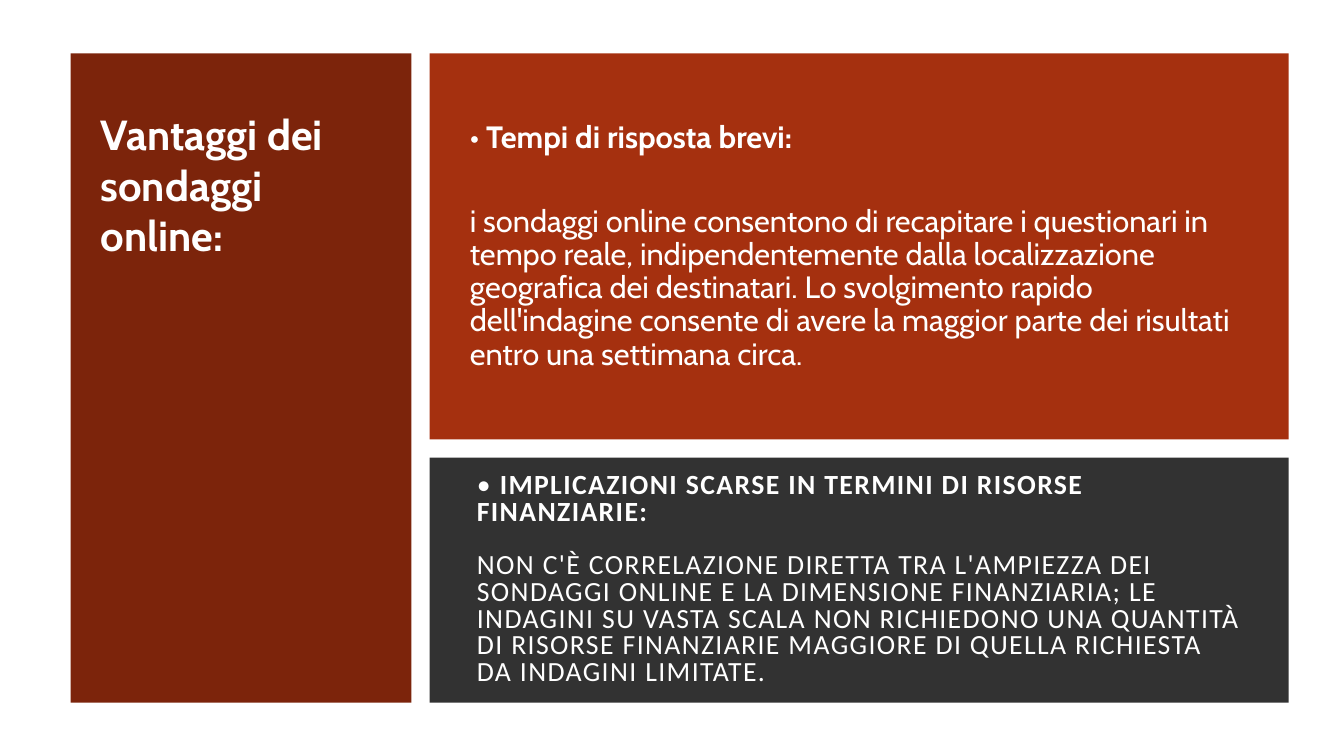
from copy import deepcopy

from pptx import Presentation
from pptx.dml.color import RGBColor
from pptx.enum.shapes import MSO_SHAPE
from pptx.enum.text import MSO_ANCHOR, MSO_AUTO_SIZE, PP_ALIGN
from pptx.util import Inches, Pt

WHITE = RGBColor(0xFF, 0xFF, 0xFF)
MAROON = RGBColor(0x7C, 0x24, 0x0B)
RUST = RGBColor(0xA5, 0x30, 0x0F)
CHARCOAL = RGBColor(0x32, 0x32, 0x32)

# Grid: two columns, the right one split into two rows
LEFT, TOP, GAP = 0.7, 0.53, 0.18
SIDE_W, MAIN_W = 3.38, 8.52
UPPER_H, LOWER_H = 3.83, 2.43
MAIN_X = LEFT + SIDE_W + GAP
LOWER_Y = TOP + UPPER_H + GAP


def inset(box, dx, dy, dw, dh):
    """Box moved in by dx, dy and made smaller by dw, dh."""
    x, y, w, h = box
    return x + dx, y + dy, w - dw, h - dh


def add_panel(slide, box, color):
    sp = slide.shapes.add_shape(MSO_SHAPE.RECTANGLE, *map(Inches, box))
    sp.fill.solid()
    sp.fill.fore_color.rgb = color
    sp.line.fill.background()
    sp.shadow.inherit = False


def add_text(slide, box):
    tf = slide.shapes.add_textbox(*map(Inches, box)).text_frame
    tf.word_wrap = True
    return tf


def style(p, font, size, bold=False):
    p.font.name, p.font.size, p.font.bold = font, Pt(size), bold
    p.font.color.rgb = WHITE


def add_run(p, text, bold=False):
    r = p.add_run()
    r.text = text
    r.font.bold = bold
    return r


def side_heading(slide, box):
    add_panel(slide, box, MAROON)
    p = add_text(slide, inset(box, 0.2, 0.5, 0.56, 4.82)).paragraphs[0]
    add_run(p, "Vantaggi dei sondaggi online:", True)
    p.space_after = Pt(6)
    style(p, "Cabin", 30, True)


def response_times(slide, box):
    add_panel(slide, box, RUST)
    tf = add_text(slide, inset(box, 0.35, 0.35, 0.69, 0.69))
    tf.vertical_anchor = MSO_ANCHOR.MIDDLE
    tf.margin_left = tf.margin_right = Inches(0.05)
    tf.margin_top = tf.margin_bottom = Inches(0.05)
    head, body = tf.paragraphs[0], tf.add_paragraph()
    add_run(head, "• ")
    add_run(head, "Tempi di risposta brevi:", True)
    add_run(body, "i sondaggi online consentono di recapitare i questionari "
            "in tempo reale, indipendentemente dalla localizzazione geografica "
            "dei destinatari. Lo svolgimento rapido dell'indagine consente di "
            "avere la maggior parte dei risultati entro una settimana circa.")
    body.space_before = Pt(30)
    for p in (head, body):
        p.line_spacing = 0.9
        p.space_after = Pt(6)
        style(p, "Cabin", 22)


def cost_title(slide, box):
    add_panel(slide, box, CHARCOAL)
    title = slide.shapes.title
    slide.shapes._spTree.append(title._element)  # in front of its panel
    x, y, w, h = inset(box, 0.37, 0.35, 0.72, 0.7)
    title.left, title.top = Inches(x), Inches(y)
    title.width, title.height = Inches(w), Inches(h)
    tf = title.text_frame
    tf.word_wrap = True
    tf.auto_size = MSO_AUTO_SIZE.NONE
    tf.vertical_anchor = MSO_ANCHOR.MIDDLE
    p = tf.paragraphs[0]
    p.alignment = PP_ALIGN.LEFT
    p.line_spacing = 0.8
    style(p, "Calibri", 19.8)
    add_run(p, "• ")
    add_run(p, "IMPLICAZIONI SCARSE IN TERMINI DI RISORSE FINANZIARIE:", True)
    p.add_line_break()
    p.add_line_break()
    add_run(p, "NON C'È CORRELAZIONE DIRETTA TRA L'AMPIEZZA DEI SONDAGGI ONLINE "
            "E LA DIMENSIONE FINANZIARIA; LE INDAGINI SU VASTA SCALA NON "
            "RICHIEDONO UNA QUANTITÀ DI RISORSE FINANZIARIE MAGGIORE DI QUELLA "
            "RICHIESTA DA INDAGINI LIMITATE.")
    # Letter spacing, and line breaks as tall as the text
    for r in p.runs:
        r.font.size = Pt(19.8)
        r._r.get_or_add_rPr().set("spc", "100")
    for br in p._p.br_lst:
        br.append(deepcopy(p.runs[0]._r.rPr))


def main():
    prs = Presentation()
    prs.slide_width, prs.slide_height = Inches(13.33), Inches(7.5)
    slide = prs.slides.add_slide(prs.slide_layouts[5])
    slide.background.fill.solid()
    slide.background.fill.fore_color.rgb = WHITE
    side_heading(slide, (LEFT, TOP, SIDE_W, UPPER_H + GAP + LOWER_H))
    response_times(slide, (MAIN_X, TOP, MAIN_W, UPPER_H))
    cost_title(slide, (MAIN_X, LOWER_Y, MAIN_W, LOWER_H))
    prs.save("out.pptx")


if __name__ == "__main__":
    main()
